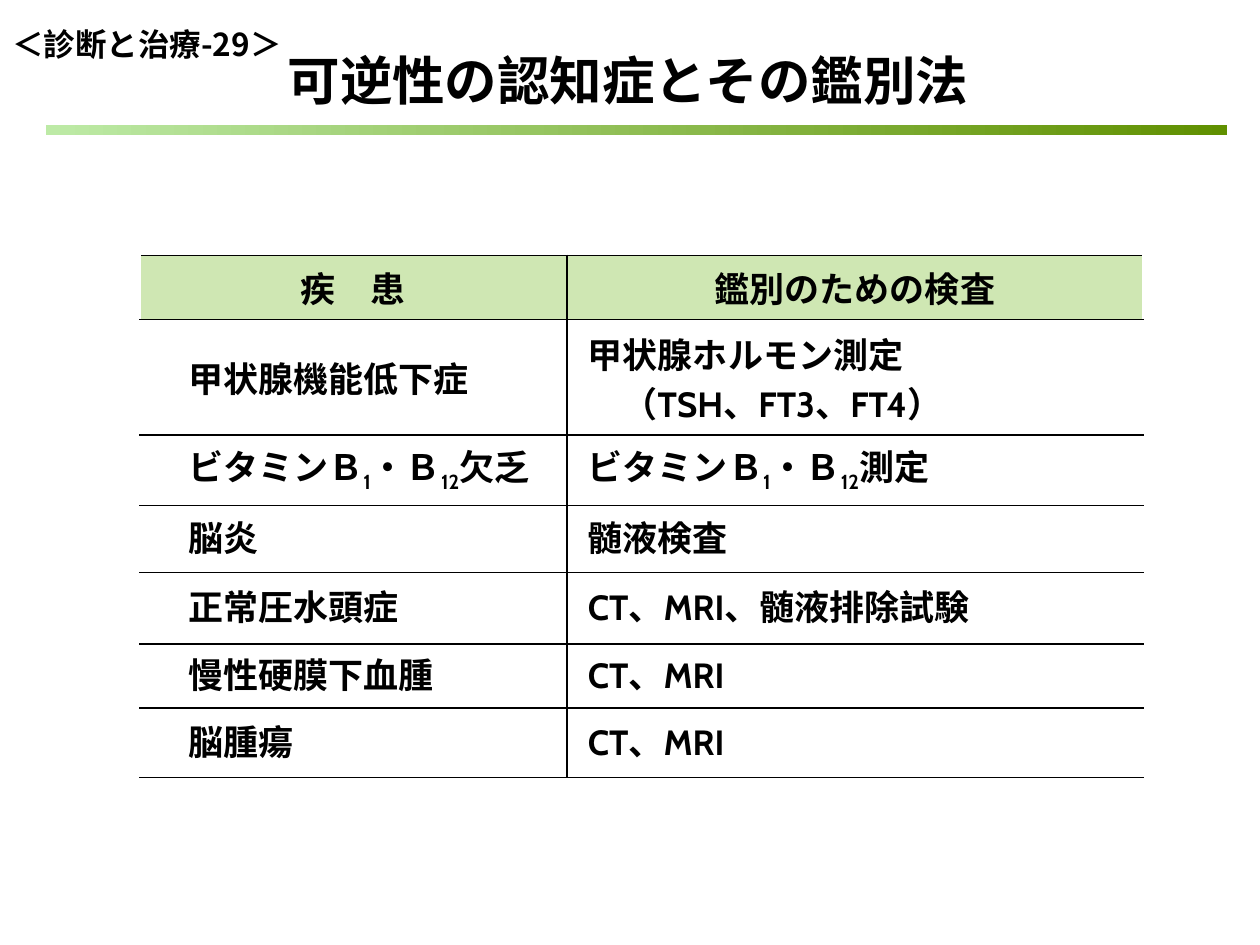
"""Build the slide on reversible dementia and its differential tests."""
from lxml.etree import SubElement as Sub
from pptx import Presentation
from pptx.dml.color import RGBColor as RGB
from pptx.enum.shapes import MSO_SHAPE as Form
from pptx.enum.text import MSO_ANCHOR as Anchor, MSO_AUTO_SIZE as Auto, PP_ALIGN as Align
from pptx.oxml.ns import qn
from pptx.util import Cm, Pt

BLACK = RGB(0x00, 0x00, 0x00)
WHITE = RGB(0xFF, 0xFF, 0xFF)
PALE = RGB(0xCF, 0xE7, 0xB3)
MINT = RGB(0xBD, 0xEA, 0xA6)
GREEN = RGB(0x60, 0x90, 0x00)
SANS = "Noto Sans CJK JP"
LATIN = "Cabin"


def style(run, size, face=SANS):
    font = run.font
    font.size, font.bold, font.name = Pt(size), True, face
    font.color.rgb = BLACK
    Sub(run._r.get_or_add_rPr(), qn("a:ea"), typeface=face)


def rule(cell, side):
    line = Sub(cell._tc.get_or_add_tcPr(), qn(f"a:{side}"), w=str(Pt(1)))
    fill = Sub(line, qn("a:solidFill"))
    Sub(fill, qn("a:srgbClr"), val=str(BLACK))


deck = Presentation()
deck.slide_width, deck.slide_height = Cm(25.4), Cm(19.05)
slide = deck.slides.add_slide(deck.slide_layouts[5])

title = slide.shapes.title
title.left, title.top, title.width, title.height = Cm(1.76), Cm(0.8), Cm(21.8), Cm(1.6)
frame = title.text_frame
frame.text = "可逆性の認知症とその鑑別法"
frame.word_wrap = False
frame.auto_size = Auto.NONE
frame.vertical_anchor = Anchor.MIDDLE
frame.paragraphs[0].alignment = Align.CENTER
style(frame.paragraphs[0].runs[0], 30)

rows = [
    ("疾　患", "鑑別のための検査"),
    ("甲状腺機能低下症", "甲状腺ホルモン測定\n（TSH、FT3、FT4）"),
    ("ビタミンＢ_1_・Ｂ_12_欠乏", "ビタミンＢ_1_・Ｂ_12_測定"),
    ("脳炎", "髄液検査"),
    ("正常圧水頭症", "CT、MRI、髄液排除試験"),
    ("慢性硬膜下血腫", "CT、MRI"),
    ("脳腫瘍", "CT、MRI"),
]
tall = [1.29, 2.33, 1.42, 1.35, 1.44, 1.29, 1.4]
wide = [8.61, 11.61]
inset = [0.97, 0.42]

grid = slide.shapes.add_table(len(rows), len(wide), Cm(2.82), Cm(5.15),
                              Cm(sum(wide)), Cm(sum(tall))).table
grid.first_row = grid.horz_banding = False
for col, width in zip(grid.columns, wide):
    col.width = Cm(width)

for i, texts in enumerate(rows):
    grid.rows[i].height = Cm(tall[i])
    head = i == 0
    for j, text in enumerate(texts):
        cell = grid.cell(i, j)
        cell.vertical_anchor = Anchor.MIDDLE
        if not head:
            cell.margin_left = Cm(inset[j])
            cell.margin_right = 0
        if i == 1:
            cell.margin_bottom = 0
        for side in ("lnL" if j else "lnR", "lnT", "lnB"):
            rule(cell, side)
        cell.fill.solid()
        cell.fill.fore_color.rgb = PALE if head else WHITE
        cell.text_frame.text = text
        for n, words in enumerate(text.split("\n")):
            par = cell.text_frame.paragraphs[n]
            par.text = ""
            par.alignment = Align.CENTER if head else Align.LEFT
            par.space_before = Pt(4 if i < 2 else 6)
            par.space_after = Pt(0 if i < 2 else 4)
            if n:
                par._p.get_or_add_pPr().set("marL", str(Cm(0.7)))
            for k, part in enumerate(words.split("_")):
                run = par.add_run()
                run.text = part
                style(run, 20, SANS if head else LATIN)
                if k % 2:
                    run._r.get_or_add_rPr().set("baseline", "-25000")

bar = slide.shapes.add_shape(Form.RECTANGLE, Cm(0.93), Cm(2.52), Cm(23.8), Cm(0.2))
bar.shadow.inherit = False
bar.line.fill.background()
bar.fill.gradient()
bar.fill.gradient_angle = 0
for stop, tint, spot in zip(bar.fill.gradient_stops, (MINT, GREEN), (0, 1)):
    stop.color.rgb = tint
    stop.position = spot

label = slide.shapes.add_textbox(Cm(0), Cm(0), Cm(6.6), Cm(1.24))
frame = label.text_frame
frame.text = "＜診断と治療-29＞"
frame.word_wrap = True
frame.auto_size = Auto.SHAPE_TO_FIT_TEXT
frame.paragraphs[0].line_spacing = 1.5
style(frame.paragraphs[0].runs[0], 18)

deck.save("out.pptx")
